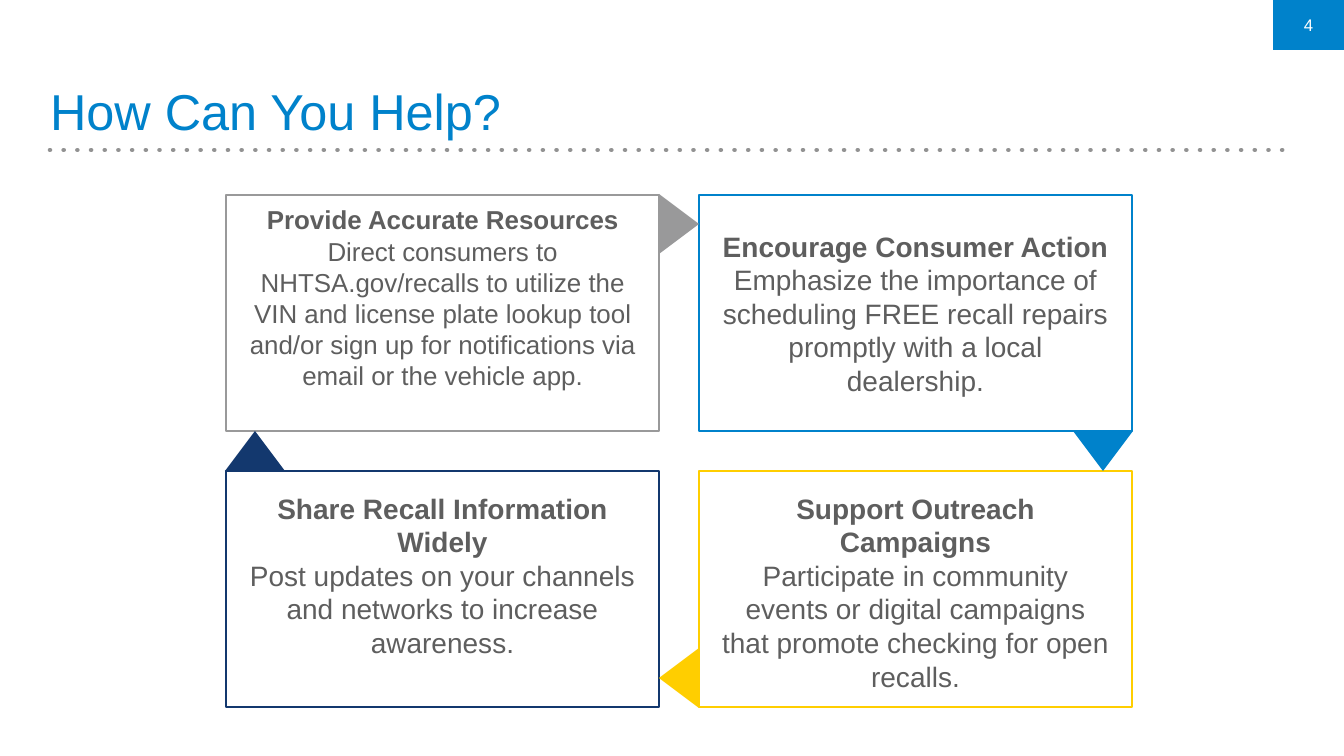
from lxml import etree
from pptx import Presentation, util as u
from pptx.dml.color import RGBColor
from pptx.enum import shapes as kinds, text as layout
from pptx.oxml import ns

SCALE = 914400 / 100.8
FONT = "Arial"
COLORS = {
    "blue": "0082CB", "gray": "99999A", "navy": "13386E", "yellow": "FFCE00",
    "text": "5E5E5E", "dots": "929292", "white": "FFFFFF",
}
CARD_WIDTH, CARD_HEIGHT = 433, 236
LEFT, RIGHT, TOP, BOTTOM = 226, 699, 195, 471
ARROW_WIDTH, ARROW_HEIGHT, ARROW_INSET = 60, 40, 29
GAP_X = (LEFT + CARD_WIDTH + RIGHT) // 2
GAP_Y = (TOP + CARD_HEIGHT + BOTTOM) // 2


def px(length):
    return u.Emu(round(length * SCALE))


def color(name):
    return RGBColor.from_string(COLORS[name])


def add_run(paragraph, words, size, tone, bold=False):
    run = paragraph.add_run()
    run.text = words
    run.font.name = FONT
    run.font.size = u.Pt(size)
    run.font.bold = bold
    run.font.color.rgb = color(tone)


def set_insets(frame, sides, top, bottom):
    frame.margin_left = frame.margin_right = px(sides)
    frame.margin_top, frame.margin_bottom = px(top), px(bottom)


def add_block(slide, kind, left, top, width, height, fill, line=None):
    block = slide.shapes.add_shape(kind, px(left), px(top), px(width), px(height))
    block.shadow.inherit = False
    block.fill.solid()
    block.fill.fore_color.rgb = color(fill)
    if line:
        block.line.color.rgb = color(line)
        block.line.width = u.Pt(1.5)
    else:
        block.line.fill.background()
    return block


def add_title(slide, words):
    title = slide.shapes.title
    title.left, title.top, title.width, title.height = px(50), px(40), px(1235), px(101)
    frame = title.text_frame
    frame.auto_size = layout.MSO_AUTO_SIZE.NONE
    frame.word_wrap = True
    frame.vertical_anchor = layout.MSO_ANCHOR.BOTTOM
    set_insets(frame, 0, 0, 0)
    heading = frame.paragraphs[0]
    heading.alignment = layout.PP_ALIGN.LEFT
    heading.line_spacing = 0.9
    add_run(heading, words, 36, "blue")


def add_dotted_rule(slide, left, right, y):
    rule = slide.shapes.add_connector(
        kinds.MSO_CONNECTOR.STRAIGHT, px(left), px(y), px(right), px(y))
    rule.line.color.rgb = color("dots")
    rule.line.width = u.Pt(3.25)
    stroke = rule.line._get_or_add_ln()
    stroke.set("cap", "rnd")
    dashes = etree.SubElement(stroke, ns.qn("a:custDash"))
    etree.SubElement(dashes, ns.qn("a:ds"), d="100000", sp="200000")
    etree.SubElement(stroke, ns.qn("a:round"))
    etree.SubElement(rule._element.spPr, ns.qn("a:effectLst"))


def add_page_number(slide, number):
    badge = add_block(slide, kinds.MSO_SHAPE.RECTANGLE, 1273, 0, 71, 50, "blue")
    badge.text_frame.vertical_anchor = layout.MSO_ANCHOR.MIDDLE
    label = badge.text_frame.paragraphs[0]
    label.alignment = layout.PP_ALIGN.CENTER
    add_run(label, number, 12, "white")


def add_card(slide, left, top, tone, heading, advice, size, anchor, inset_top):
    card = add_block(slide, kinds.MSO_SHAPE.RECTANGLE, left, top,
                     CARD_WIDTH, CARD_HEIGHT, "white", tone)
    frame = card.text_frame
    frame.word_wrap = True
    frame.vertical_anchor = anchor
    set_insets(frame, 20, inset_top, 20)
    for paragraph, words, bold in (
            (frame.paragraphs[0], heading, True),
            (frame.add_paragraph(), advice, False)):
        paragraph.alignment = layout.PP_ALIGN.CENTER
        add_run(paragraph, words, size, "text", bold)


def add_arrow(slide, center_x, center_y, tone, rotation):
    arrow = add_block(slide, kinds.MSO_SHAPE.ISOSCELES_TRIANGLE,
                      center_x - ARROW_WIDTH // 2, center_y - ARROW_HEIGHT // 2,
                      ARROW_WIDTH, ARROW_HEIGHT, tone)
    arrow.rotation = rotation


def main():
    deck = Presentation()
    deck.slide_width, deck.slide_height = px(1344), px(756)
    slide = deck.slides.add_slide(deck.slide_layouts[5])

    add_dotted_rule(slide, 50, 1285, 150)
    add_title(slide, "How Can You Help?")

    anchor_top, anchor_middle = layout.MSO_ANCHOR.TOP, layout.MSO_ANCHOR.MIDDLE
    add_card(slide, LEFT, TOP, "gray", "Provide Accurate Resources",
             "Direct consumers to NHTSA.gov/recalls to utilize the VIN and license "
             "plate lookup tool and/or sign up for notifications via email or the "
             "vehicle app.", 18.5, anchor_top, 9)
    add_card(slide, RIGHT, TOP, "blue", "Encourage Consumer Action",
             "Emphasize the importance of scheduling FREE recall repairs promptly "
             "with a local dealership.", 20, anchor_middle, 20)
    add_card(slide, RIGHT, BOTTOM, "yellow", "Support Outreach Campaigns",
             "Participate in community events or digital campaigns that promote "
             "checking for open recalls.", 20, anchor_top, 20)
    add_card(slide, LEFT, BOTTOM, "navy", "Share Recall Information Widely",
             "Post updates on your channels and networks to increase awareness.",
             20, anchor_top, 20)

    add_arrow(slide, GAP_X, TOP + ARROW_INSET, "gray", 90)
    add_arrow(slide, RIGHT + CARD_WIDTH - ARROW_INSET, GAP_Y, "blue", 180)
    add_arrow(slide, GAP_X, BOTTOM + CARD_HEIGHT - ARROW_INSET, "yellow", 270)
    add_arrow(slide, LEFT + ARROW_INSET, GAP_Y, "navy", 0)

    add_page_number(slide, "4")
    deck.save("out.pptx")


if __name__ == "__main__":
    main()
